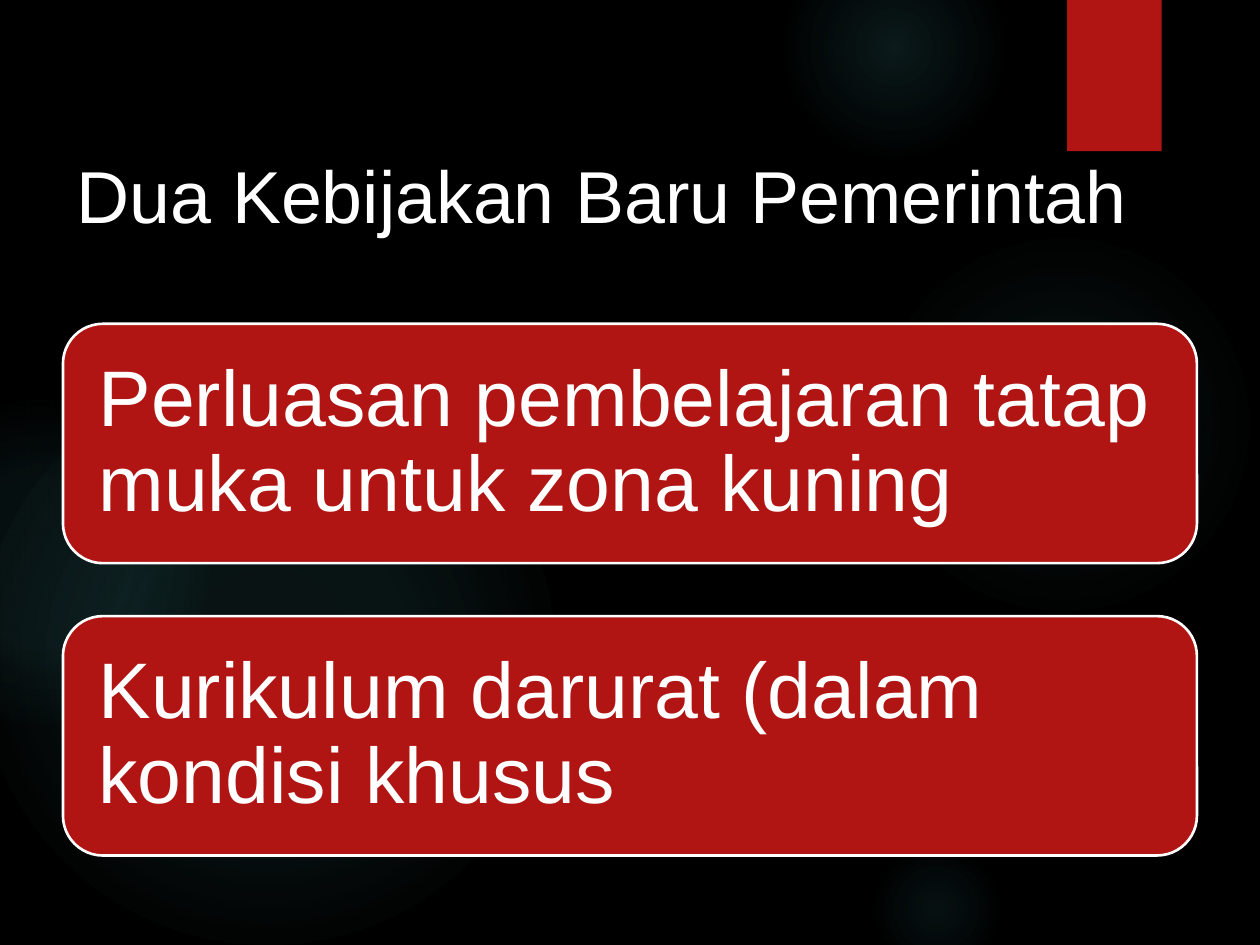
from lxml import etree
from pptx import Presentation, util as u
from pptx.dml.color import RGBColor
from pptx.enum import shapes, text
from pptx.oxml import parse_xml
from pptx.oxml.ns import nsdecls

W, H = 10, 7.5
FONT = "Arial"
HUES = {"back": "000000", "glow": "50B9C1", "red": "B01513", "white": "FFFFFF"}

# left, top, size, then opacity at the centre and at 36 %, and where it fades out
GLOWS = [
    (6.89, 1.83, 3.08, 7, 6, 69),
    (6.22, -0.5, 1.75, 14, 7, 73),
    (6.89, 6.67, 1.08, 9, 5, 66),
    (-0.17, 2.92, 4.58, 11, 10, 75),
    (-0.92, 3.17, 2.58, 8, 8, 72),
]
CARDS = [
    "Perluasan pembelajaran tatap muka untuk zona kuning",
    "Kurikulum darurat (dalam kondisi khusus",
]
LEFT, TOP, WIDE, HIGH, STEP = 0.05 * W, 2.57, 0.9 * W, 1.9, 2.32


def hue(name):
    return RGBColor.from_string(HUES[name])


def shape(slide, kind, *box):
    item = slide.shapes.add_shape(kind, *map(u.Inches, box))
    item.shadow.inherit = False
    item.line.fill.background()
    item.fill.solid()
    item.fill.fore_color.rgb = hue("red")
    return item


def glow(slide, left, top, size, core, mid, edge):
    """Draw a round light that fades to nothing at its edge."""
    item = shape(slide, shapes.MSO_SHAPE.OVAL, left, top, size, size)
    stops = "".join(
        f'<a:gs pos="{pos * 1000}"><a:srgbClr val="{HUES["glow"]}">'
        f'<a:alpha val="{alpha * 1000}"/></a:srgbClr></a:gs>'
        for pos, alpha in [(0, core), (36, mid), (edge, 0)])
    grad = parse_xml(
        f'<a:gradFill {nsdecls("a")}><a:gsLst>{stops}</a:gsLst>'
        '<a:path path="circle"><a:fillToRect l="50000" t="50000" '
        'r="50000" b="50000"/></a:path></a:gradFill>')
    props = item.element.spPr
    props.replace(props.find("{*}solidFill"), grad)


def ribbon(slide):
    item = shape(slide, shapes.MSO_SHAPE.RECTANGLE, 8.47, 0, 0.75, 1.2)
    effects = item.element.spPr.find("{*}effectLst")
    effects.append(parse_xml(
        f'<a:outerShdw {nsdecls("a")} blurRad="38100" dist="25400" dir="5400000">'
        '<a:srgbClr val="000000"><a:alpha val="45000"/></a:srgbClr></a:outerShdw>'))


def write(item, words, size, anchor, **pads):
    frame = item.text_frame
    frame.text = words
    form = {"word_wrap": True, "auto_size": text.MSO_AUTO_SIZE.NONE,
            "vertical_anchor": anchor}
    form.update({f"margin_{side}": u.Inches(pad) for side, pad in pads.items()})
    for key, value in form.items():
        setattr(frame, key, value)
    para = frame.paragraphs[0]
    para.alignment = text.PP_ALIGN.LEFT
    font = para.runs[0].font
    for key, value in {"name": FONT, "size": u.Pt(size)}.items():
        setattr(font, key, value)
    font.color.rgb = hue("white")
    return para


def title(slide, words):
    item = slide.shapes.title
    box = {"left": 0.54, "top": 0.99, "width": 9, "height": 0.89}
    for key, value in box.items():
        setattr(item, key, u.Inches(value))
    write(item, words, 42, text.MSO_ANCHOR.TOP, left=0.07, right=0.07, top=0.2, bottom=0)
    slide.shapes.element.append(item.element)  # bring to the front


def card(slide, row, words):
    item = shape(slide, shapes.MSO_SHAPE.ROUNDED_RECTANGLE,
                 LEFT, TOP + row * STEP, WIDE, HIGH)
    item.line.color.rgb = hue("white")
    item.line.width = u.Pt(1.5)
    pads = dict.fromkeys(("left", "right", "top", "bottom"), 0.19)
    para = write(item, words, 45, text.MSO_ANCHOR.MIDDLE, **pads)
    para.line_spacing = 0.9


def main():
    deck = Presentation()
    deck.slide_width, deck.slide_height = u.Inches(W), u.Inches(H)
    slide = deck.slides.add_slide(deck.slide_layouts[5])
    slide.background.fill.solid()
    slide.background.fill.fore_color.rgb = hue("back")
    for light in GLOWS:
        glow(slide, *light)
    ribbon(slide)
    title(slide, "Dua Kebijakan Baru Pemerintah")
    for row, words in enumerate(CARDS):
        card(slide, row, words)
    deck.save("out.pptx")


if __name__ == "__main__":
    main()
